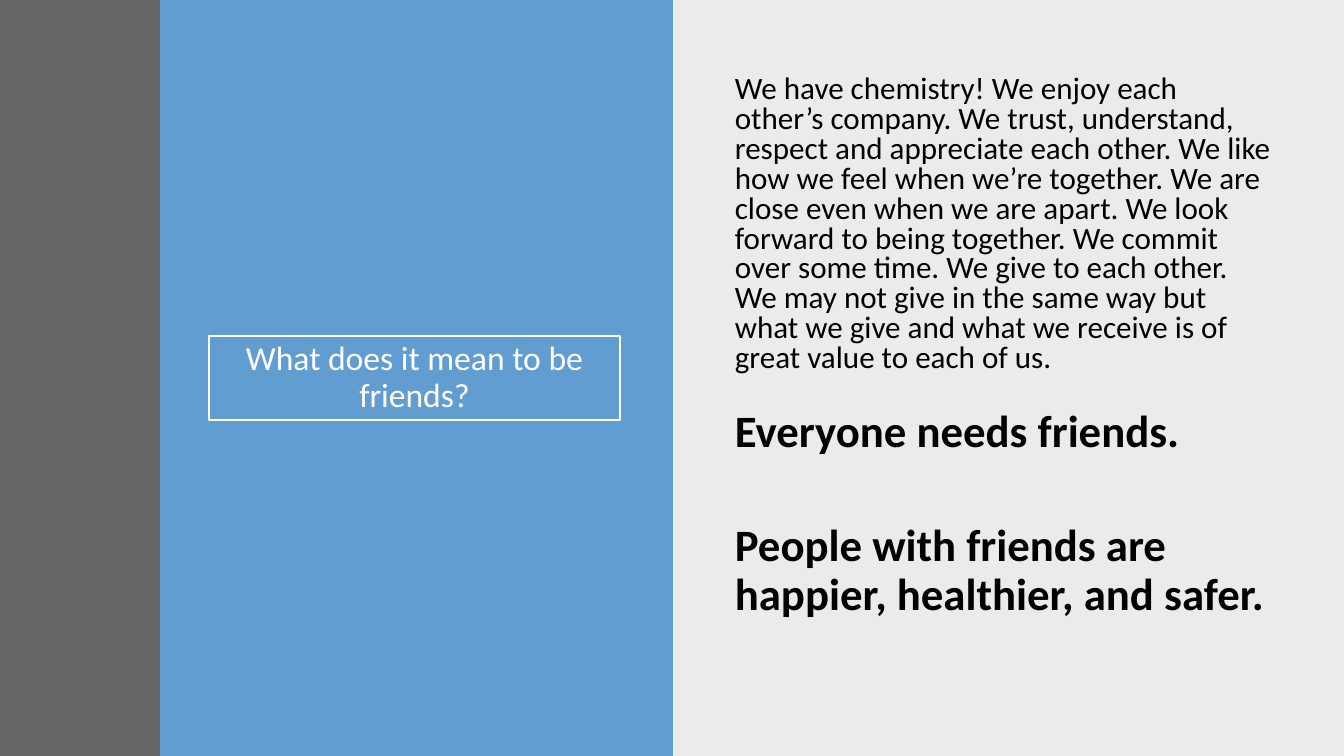
import pptx
import pptx.util
from lxml import etree
from pptx.dml.color import RGBColor
from pptx.enum.shapes import MSO_SHAPE
from pptx.enum.text import MSO_ANCHOR, MSO_AUTO_SIZE, PP_ALIGN
from pptx.oxml.ns import qn

PX = 9071.43  # EMU per px at 100.8 px to the inch
WIDTH, HEIGHT = 1344, 756
BLACK = RGBColor(0x00, 0x00, 0x00)
WHITE = RGBColor(0xFF, 0xFF, 0xFF)
BLUE = RGBColor(0x62, 0x9D, 0xD1)
CHARCOAL = RGBColor(0x40, 0x40, 0x40)


def emu(*lengths):
    return [round(length * PX) for length in lengths]


def add_text(page, place, paragraphs, size, bold, line_spacing):
    """Add a wrapping text box and return its paragraphs."""
    frame = page.shapes.add_textbox(*emu(*place)).text_frame
    frame.word_wrap = True
    frame.text = "\n".join(paragraphs)
    for para in frame.paragraphs:
        para.line_spacing = line_spacing
        para.font.name = "Calibri"
        para.font.size = pptx.util.Pt(size)
        para.font.bold = bold
        para.font.color.rgb = BLACK
    return frame.paragraphs


deck = pptx.Presentation()
deck.slide_width, deck.slide_height = emu(WIDTH, HEIGHT)
page = deck.slides.add_slide(deck.slide_layouts.get_by_name("Title Only"))
page.background.fill.solid()
page.background.fill.fore_color.rgb = WHITE

# Full-height panels: left, width, colour, opacity in percent
for left, width, colour, opacity in [
    (672, 672, BLACK, 8),
    (160, 513, BLUE, 100),
    (0, 160, CHARCOAL, 80),
]:
    panel = page.shapes.add_shape(MSO_SHAPE.RECTANGLE, *emu(left, 0, width, HEIGHT))
    panel.shadow.inherit = False
    panel.line.fill.background()
    panel.fill.solid()
    panel.fill.fore_color.rgb = colour
    if opacity < 100:
        tint = panel.element.spPr.find(qn("a:solidFill"))[0]
        etree.SubElement(tint, qn("a:alpha"), val=str(opacity * 1000))

title = page.shapes.title
title.left, title.top, title.width, title.height = emu(209, 336, 411, 84)
title.line.color.rgb = WHITE
title.line.width = pptx.util.Pt(2)
title.element.getparent().append(title.element)  # bring in front of the panels
frame = title.text_frame
frame.text = "What does it mean to be friends?"
frame.word_wrap = True
frame.auto_size = MSO_AUTO_SIZE.NONE
frame.vertical_anchor = MSO_ANCHOR.MIDDLE
heading = frame.paragraphs[0]
heading.alignment = PP_ALIGN.CENTER
heading.line_spacing = 0.9
heading.font.name = "Calibri"
heading.font.size = pptx.util.Pt(24)
heading.font.color.rgb = WHITE

friendship = (
    "We have chemistry! We enjoy each other’s company. We trust, understand, "
    "respect and appreciate each other. We like how we feel when we’re together. "
    "We are close even when we are apart. We look forward to being together. "
    "We commit over some time. We give to each other. We may not give in the same "
    "way but what we give and what we receive is of great value to each of us."
)
add_text(page, (725, 71, 557, 333), [friendship], 22.2, False, 0.8)

needs, benefits = add_text(
    page,
    (725, 404, 557, 281),
    ["Everyone needs friends.", "People with friends are happier, healthier, and safer."],
    32, True, 0.9,
)
needs.space_after = benefits.space_after = pptx.util.Pt(6)
benefits.space_before = pptx.util.Pt(41)

deck.save("out.pptx")
